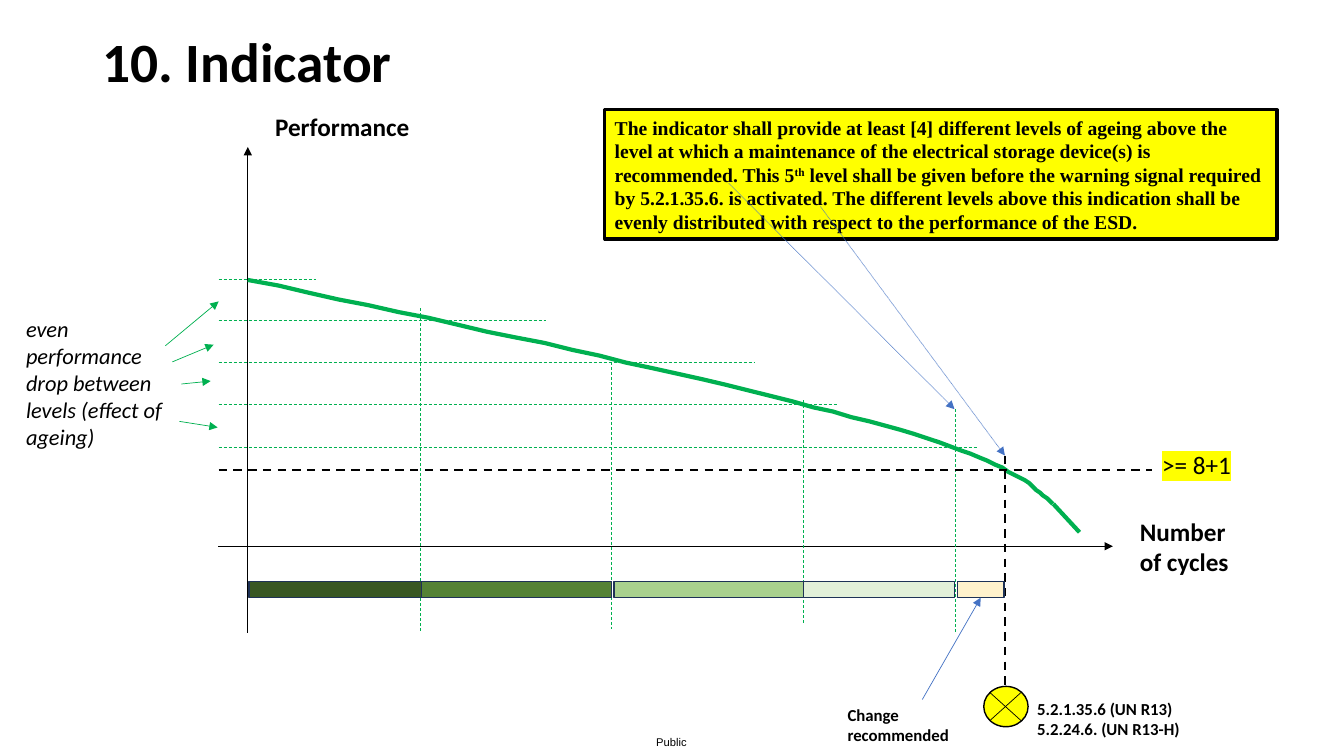
from dataclasses import dataclass

from lxml import etree
from pptx import Presentation
from pptx import util as u
from pptx.dml.color import RGBColor
from pptx.enum import dml, shapes, text
from pptx.oxml.ns import qn


@dataclass(frozen=True)
class Theme:
    black: str = "000000"
    green: str = "00B050"
    blue: str = "4472C4"
    yellow: str = "FFFF00"
    bar_edge: str = "1E3256"
    bars: tuple = ("385723", "548235", "A9D18E", "E2F0D9", "FFF2CC")
    body: str = "Calibri"
    rule: str = "Times New Roman"
    footer: str = "Arial"
    title_size: float = 39.6
    label_size: int = 18
    remark_size: int = 16
    rule_size: int = 14
    note_size: int = 12
    footer_size: int = 8


theme = Theme()
presentation = Presentation()
presentation.slide_width = u.Pt(960)
presentation.slide_height = u.Pt(540)
slide = presentation.slides.add_slide(presentation.slide_layouts[5])


def add_line(start, end, color, width=0.5, dash=None, arrow=False, parent=slide):
    line = parent.shapes.add_connector(
        shapes.MSO_CONNECTOR.STRAIGHT, *[u.Pt(value) for value in (*start, *end)])
    line.line.color.rgb = RGBColor.from_string(color)
    line.line.width = u.Pt(width)
    if dash:
        line.line.dash_style = dash
    if arrow:
        etree.SubElement(line.line._get_or_add_ln(), qn("a:tailEnd"), type="triangle")
    etree.SubElement(line._element.spPr, qn("a:effectLst"))
    return line


def write(shape, lines, size, font=theme.body, bold=False, italic=False, wrap=True):
    frame = shape.text_frame
    frame.word_wrap = wrap
    frame.text = "\n".join(lines)
    for paragraph in frame.paragraphs:
        paragraph.alignment = text.PP_ALIGN.LEFT
        paragraph.font.name = font
        paragraph.font.size = u.Pt(size)
        paragraph.font.bold = bold
        paragraph.font.italic = italic
        paragraph.font.color.rgb = RGBColor.from_string(theme.black)
    frame.auto_size = text.MSO_AUTO_SIZE.SHAPE_TO_FIT_TEXT
    return frame


DASH = dml.MSO_LINE.DASH

title = slide.shapes.title
title.left, title.top, title.width, title.height = map(u.Pt, (66, 20, 828, 52.5))
title_frame = write(title, ["10. Indicator"], theme.title_size, bold=True)
title_frame.auto_size = text.MSO_AUTO_SIZE.NONE
title_frame.vertical_anchor = text.MSO_ANCHOR.MIDDLE
title_frame.paragraphs[0].line_spacing = 0.9

add_line((156, 390.2), (795, 390.2), theme.black, arrow=True)
add_line((177, 452), (177, 105), theme.black, arrow=True)

curve_start = (177, 199.5)
curve_end = (752.4, 360)
segments = [
    (curve_start, (350.6, 236.9), (524.9, 274.3), (620.6, 301)),
    ((620.6, 301), (716.4, 327.6), (734.4, 343.4), curve_end),
]
steps = 24
curve_points = []
for a, b, c, d in segments:
    for step in range(1, steps + 1):
        t = step / steps
        s = 1 - t
        curve_points.append(tuple(
            s**3 * a[axis] + 3 * s**2 * t * b[axis] + 3 * s * t**2 * c[axis] + t**3 * d[axis]
            for axis in (0, 1)))
builder = slide.shapes.build_freeform(*curve_start, scale=u.Pt(1))
builder.add_line_segments(curve_points, close=False)
curve = builder.convert_to_shape()
curve.shadow.inherit = False
curve.fill.background()
curve.line.color.rgb = RGBColor.from_string(theme.green)
curve.line.width = u.Pt(3)
add_line(curve_end, (771.1, 380.2), theme.green, 3)

for y, right in [(199.5, 226), (229, 390.2), (258.5, 539.3), (288.7, 598.3), (319.7, 697.7)]:
    add_line((156.2, y), (right, y), theme.green, dash=DASH)
for x, top, bottom in [(300.2, 220.3, 450.7), (437, 254.9, 449.3),
                       (573.8, 285.8, 445.7), (682.6, 292.3, 452.2)]:
    add_line((x, top), (x, bottom), theme.green, dash=DASH)
add_line((156.2, 335.5), (823, 335.5), theme.black, 1.5, DASH)
add_line((717.8, 325.4), (717.8, 493.9), theme.black, 1.5, DASH)

bar_spans = [(177.8, 123.1), (301, 136), (438.5, 136), (573.8, 108), (684, 33.1)]
for (left, width), color in zip(bar_spans, theme.bars):
    bar = slide.shapes.add_shape(
        shapes.MSO_SHAPE.RECTANGLE, u.Pt(left), u.Pt(415.4), u.Pt(width), u.Pt(11.5))
    bar.shadow.inherit = False
    bar.fill.solid()
    bar.fill.fore_color.rgb = RGBColor.from_string(color)
    bar.line.color.rgb = RGBColor.from_string(theme.bar_edge)
    bar.line.width = u.Pt(1)
change_arrow = add_line((658.8, 499.7), (700.6, 426.9), theme.blue, arrow=True)
change_arrow.end_connect(bar, 2)

lamp = slide.shapes.add_group_shape()
bulb = lamp.shapes.add_shape(
    shapes.MSO_SHAPE.OVAL, u.Pt(702.7), u.Pt(490.3), u.Pt(31.7), u.Pt(28.8))
callout = slide.shapes.add_shape(
    shapes.MSO_SHAPE.RECTANGLE, u.Pt(432), u.Pt(78.5), u.Pt(480.2), u.Pt(92.2))
for shape, edge in [(bulb, 1), (callout, 2.25)]:
    shape.shadow.inherit = False
    shape.fill.solid()
    shape.fill.fore_color.rgb = RGBColor.from_string(theme.yellow)
    shape.line.color.rgb = RGBColor.from_string(theme.black)
    shape.line.width = u.Pt(edge)
for start_y, end_y in [(514.8, 494.6), (494.6, 514.8)]:
    add_line((707, start_y), (729.4, end_y), theme.black, parent=lamp)

rule = write(callout, [
    "The indicator shall provide at least [4] different levels of ageing above the level at "
    "which a maintenance of the electrical storage device(s) is recommended. This 5"
], theme.rule_size, theme.rule, bold=True).paragraphs[0]
rule.runs[0].font.color.rgb = RGBColor.from_string(theme.black)
ordinal = rule.add_run()
ordinal.text = "th"
ordinal._r.get_or_add_rPr().set("baseline", "30000")
rule.add_run().text = (
    " level shall be given before the warning signal required by 5.2.1.35.6. is activated. "
    "The different levels above this indication shall be evenly distributed with respect to "
    "the performance of the ESD.")
for run in rule.runs:
    run.font.color.rgb = RGBColor.from_string(theme.black)

for start, end in [((520.6, 131), (681.8, 292.3)), ((586.1, 147.6), (717.8, 325.4))]:
    add_line(start, end, theme.blue, dash=dml.MSO_LINE.ROUND_DOT, arrow=True)
for start, end in [((118.1, 247), (156.2, 215.3)), ((123.1, 258.5), (152.6, 246.2)),
                   ((129.6, 274.3), (150.5, 272.2)), ((128.2, 301), (155.5, 305.3))]:
    add_line(start, end, theme.green, arrow=True)

labels = [
    ((189.4, 76.3, 111.6, 28.8), ["Performance"], theme.label_size, True, False, False),
    ((807.1, 365, 84.2, 51.1), ["Number of cycles"], theme.label_size, True, False, True),
    ((823, 317.5, 64.1, 28.8), [">= 8+1"], theme.label_size, False, False, False),
    ((733.7, 495.4, 144, 36), ["5.2.1.35.6 (UN R13)", "5.2.24.6. (UN R13-H)"],
     theme.note_size, True, False, True),
    ((598.3, 499.7, 88.6, 36), ["Change recommended"], theme.note_size, True, False, True),
    ((11.5, 221.8, 123.1, 104.4), ["even performance drop between levels (effect of ageing)"],
     theme.remark_size, False, True, True),
]
for bounds, lines, size, bold, italic, wrap in labels:
    label = slide.shapes.add_textbox(*map(u.Pt, bounds))
    frame = write(label, lines, size, bold=bold, italic=italic, wrap=wrap)
    if lines == [">= 8+1"]:
        properties = frame.paragraphs[0].runs[0]._r.get_or_add_rPr()
        highlight = etree.SubElement(properties, qn("a:highlight"))
        etree.SubElement(highlight, qn("a:srgbClr"), val=theme.yellow)

footer = slide.shapes.add_textbox(*map(u.Pt, (468.7, 525.6, 24.5, 9.4)))
footer_frame = write(footer, ["Public"], theme.footer_size, theme.footer, wrap=False)
footer_frame.margin_left = footer_frame.margin_right = 0
footer_frame.margin_top = footer_frame.margin_bottom = 0

presentation.save("out.pptx")
